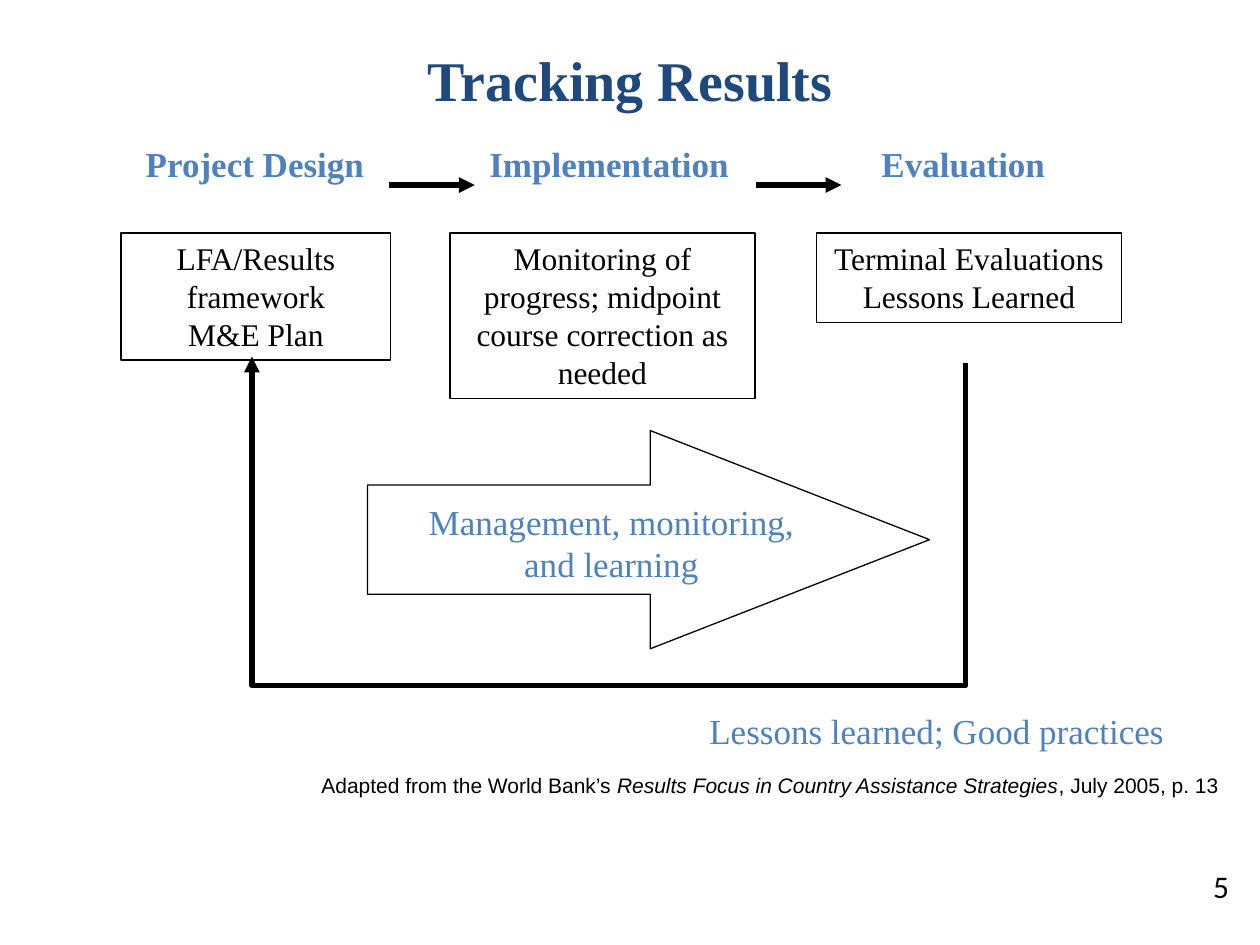
from lxml.etree import SubElement
from pptx import Presentation
from pptx.dml.color import RGBColor
from pptx.enum.shapes import MSO_CONNECTOR as LINE, MSO_SHAPE as SHAPE
from pptx.enum.text import MSO_ANCHOR as ANCHOR, PP_ALIGN as ALIGN
from pptx.oxml.ns import qn
from pptx.util import Cm, Pt

NAVY, BLUE, BLACK = "1F497D", "4F81BD", "000000"
SERIF = "Times New Roman"

TITLE = "Tracking Results"
STAGES = ["Project Design", "Implementation", "Evaluation"]
# left, width, height, paragraphs
BOXES = [
    (2.44, 5.44, 2.56, ["LFA/Results framework", "M&E Plan"]),
    (9.07, 6.15, 3.33, ["Monitoring of progress; midpoint course correction as needed"]),
    (16.46, 6.15, 1.8, ["Terminal Evaluations", "Lessons Learned"]),
]
STAGE_ARROWS = [7.85, 15.24]
CYCLE = "Management, monitoring, and learning"
FEEDBACK = "Lessons learned; Good practices"
# text, italic
CREDIT = [
    ("Adapted from the World Bank’s ", False),
    ("Results Focus in Country Assistance Strategies", True),
    (", July 2005, p. 13", False),
]
PAGE = "5"


def rgb(code):
    return RGBColor.from_string(code)


def write(s, paragraphs, size, color=BLACK, font=SERIF, bold=False,
          align=ALIGN.CENTER, anchor=ANCHOR.TOP, wrap=True):
    """Fill a shape; each paragraph is a list of (text, italic) runs or a string."""
    tf = s.text_frame
    tf.word_wrap, tf.vertical_anchor = wrap, anchor
    for i, runs in enumerate(paragraphs):
        p = tf.add_paragraph() if i else tf.paragraphs[0]
        p.alignment = align
        f = p.font
        f.size, f.name, f.bold, f.color.rgb = Pt(size), font, bold, rgb(color)
        for text, italic in [(runs, False)] if isinstance(runs, str) else runs:
            r = p.add_run()
            r.text = text
            if italic:
                r.font.italic = True


def add_text(x, y, w, h, paragraphs, size, color=BLACK, **style):
    s = slide.shapes.add_textbox(Cm(x), Cm(y), Cm(w), Cm(h))
    write(s, paragraphs, size, color, **style)


def add_outline(kind, x, y, w, h, line=BLACK):
    s = slide.shapes.add_shape(kind, Cm(x), Cm(y), Cm(w), Cm(h))
    s.shadow.inherit = False
    s.fill.background()
    if line:
        s.line.color.rgb, s.line.width = rgb(line), Pt(0.75)
    else:
        s.line.fill.background()
    return s


def add_arrow(kind, x1, y1, x2, y2):
    s = slide.shapes.add_connector(kind, Cm(x1), Cm(y1), Cm(x2), Cm(y2))
    s.line.color.rgb, s.line.width = rgb(BLACK), Pt(3)
    SubElement(s.line._get_or_add_ln(), qn("a:tailEnd"), type="triangle")
    SubElement(s._element.spPr, qn("a:effectLst"))
    return s


def add_return_arrow(x1, x2, top, rise, drop):
    """Go down from (x1, top), left, and up to (x2, top - rise)."""
    cx, cy, span = (x1 + x2) / 2, top - rise / 2, x1 - x2
    s = add_arrow(LINE.ELBOW, cx + rise / 2, cy - span / 2, cx - rise / 2, cy + span / 2)
    s._element.spPr.find(qn("a:xfrm")).set("rot", str(90 * 60000))
    guides = s._element.spPr.find(qn("a:prstGeom")).find(qn("a:avLst"))
    SubElement(guides, qn("a:gd"), name="adj1", fmla=f"val {round(-drop / rise * 100000)}")


prs = Presentation()
prs.slide_width, prs.slide_height = Cm(25.4), Cm(19.05)
slide = prs.slides.add_slide(prs.slide_layouts[6])

add_text(1.27, 0, 22.86, 3.18, [TITLE], 32, NAVY, bold=True, anchor=ANCHOR.MIDDLE)
number = add_outline(SHAPE.OVAL, 24, 17.15, 1.4, 1.4, line=None)
write(number, [PAGE], 18, font="Calibri", align=ALIGN.LEFT)

for i, stage in enumerate(STAGES):
    add_text(1.7 + 7.14 * i, 2.74, 6.88, 1.12, [stage], 20, BLUE, bold=True)
for x in STAGE_ARROWS:
    add_arrow(LINE.STRAIGHT, x, 3.73, x + 1.72, 3.73)
for x, w, h, lines in BOXES:
    write(add_outline(SHAPE.RECTANGLE, x, 4.7, w, h), lines, 18)

block = add_outline(SHAPE.RIGHT_ARROW, 7.41, 8.68, 11.33, 4.4)
block.adjustments[1] = 1.28
add_text(8.26, 9.96, 8.13, 1.96, [CYCLE], 20, BLUE)

add_return_arrow(19.47, 5.08, top=7.32, rise=0.13, drop=6.5)
add_text(13.97, 14.17, 9.83, 1.12, [FEEDBACK], 20, BLUE, wrap=False)
add_text(6.23, 15.44, 18.6, 0.76, [CREDIT], 12, font="Arial", align=ALIGN.LEFT, wrap=False)

prs.save("out.pptx")
